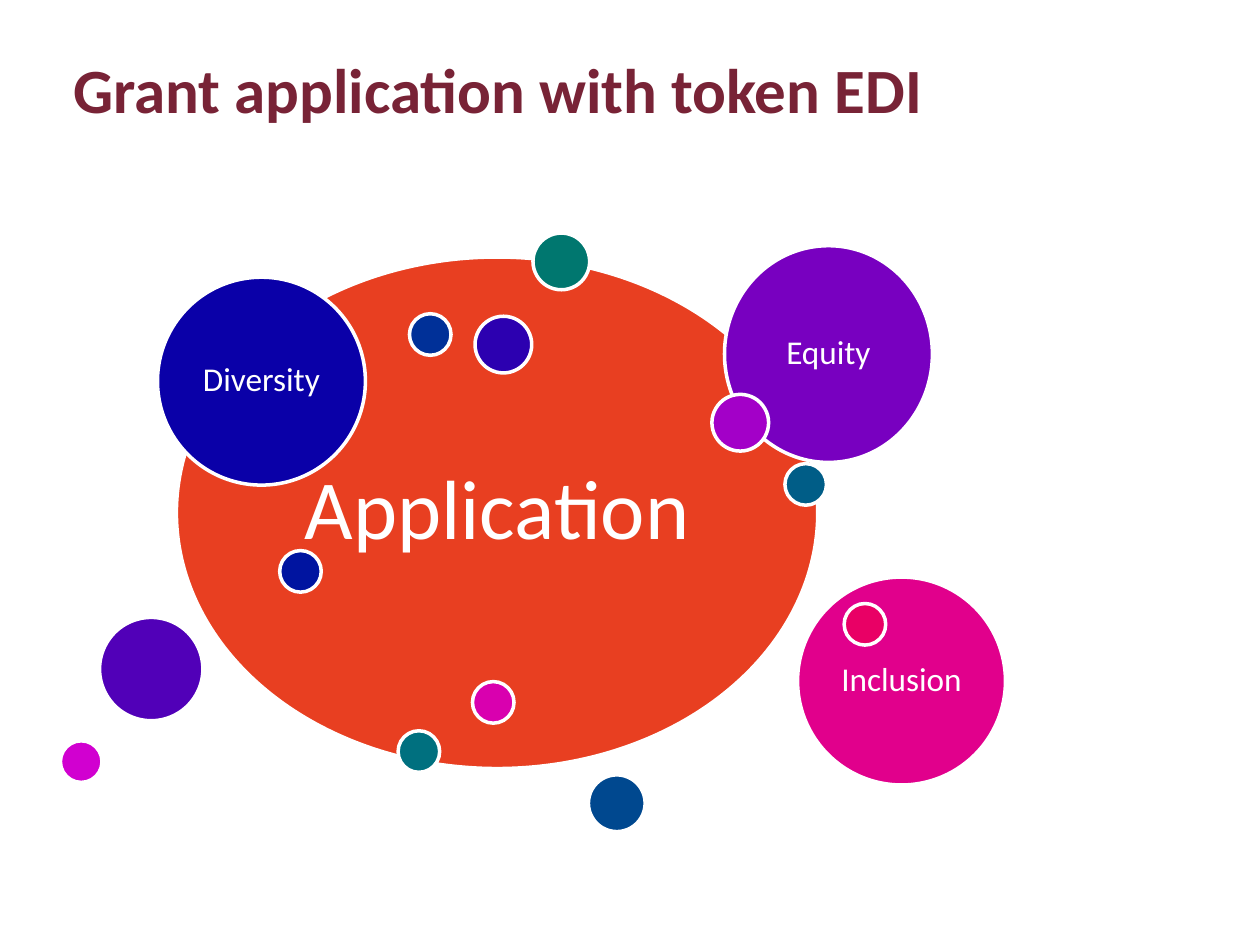
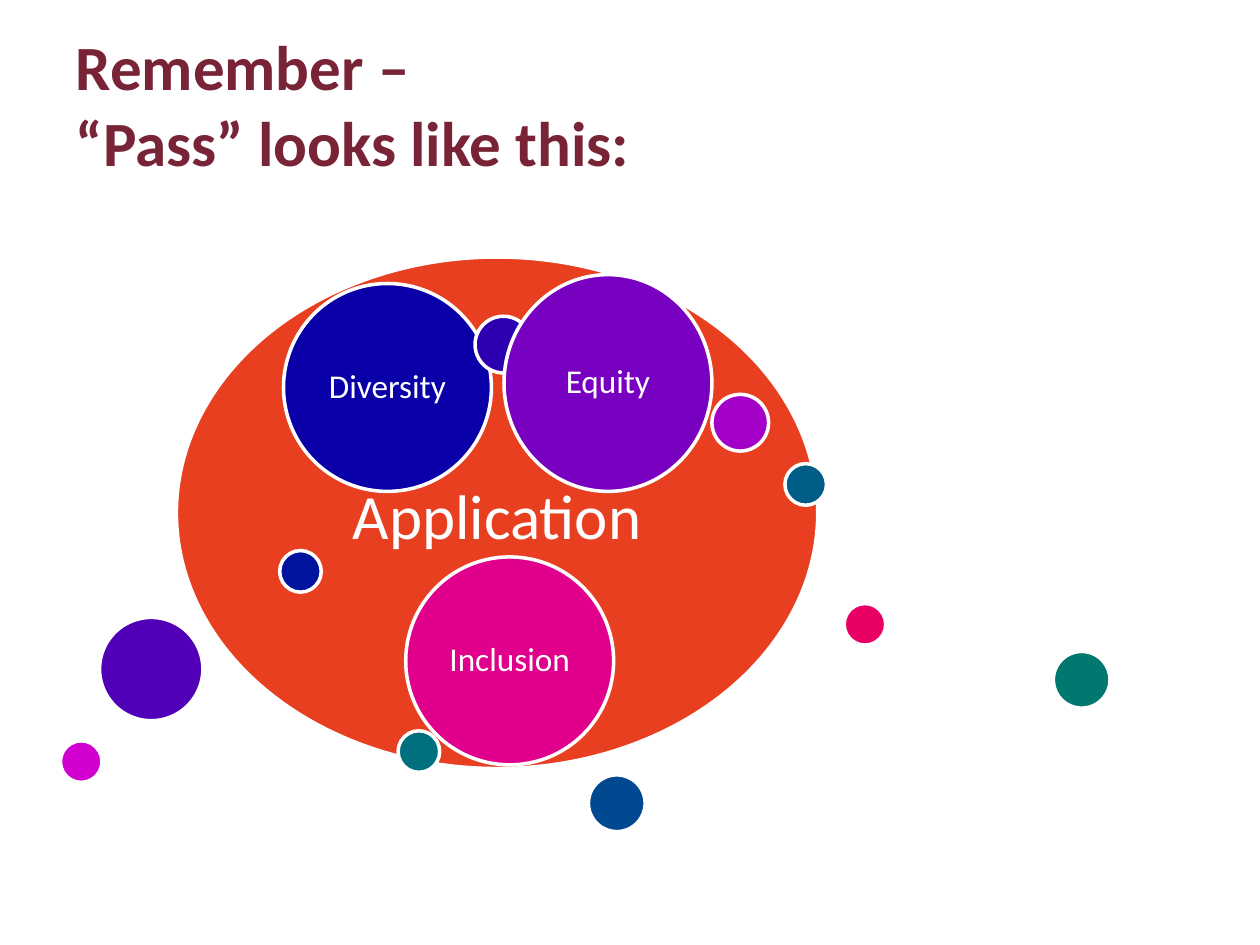
import pptx
import pptx.dml.color
import pptx.enum.shapes
import pptx.enum.text
import pptx.util

Inches = pptx.util.Inches
Pt = pptx.util.Pt
RGBColor = pptx.dml.color.RGBColor

FONT = "Calibri"
WHITE = RGBColor(0xFF, 0xFF, 0xFF)
MAROON = RGBColor(0x78, 0x23, 0x36)
ORANGE = RGBColor(0xE8, 0x3F, 0x21)
GREEN = RGBColor(0x00, 0x77, 0x6F)
TEAL = RGBColor(0x00, 0x70, 0x7F)
PETROL = RGBColor(0x00, 0x5D, 0x87)
OCEAN = RGBColor(0x00, 0x48, 0x8F)
COBALT = RGBColor(0x00, 0x30, 0x98)
ROYAL = RGBColor(0x00, 0x14, 0xA0)
NAVY = RGBColor(0x0A, 0x00, 0xA8)
INDIGO = RGBColor(0x2C, 0x00, 0xB0)
VIOLET = RGBColor(0x51, 0x00, 0xB8)
PURPLE = RGBColor(0x78, 0x00, 0xC0)
ORCHID = RGBColor(0xA3, 0x00, 0xC8)
FUCHSIA = RGBColor(0xD1, 0x00, 0xD0)
MAGENTA = RGBColor(0xD9, 0x00, 0xAF)
PINK = RGBColor(0xE1, 0x00, 0x8C)
ROSE = RGBColor(0xE9, 0x00, 0x65)

SMALL, MEDIUM, LARGE, THEME = 0.33, 0.45, 0.82, 1.65
EQUITY_HEIGHT = 1.72
DIAGRAM_LEFT, DIAGRAM_TOP = 0.48, 1.85


def style_text(frame, size, color, bold=False):
    """Give every run in the frame the shared font."""
    for paragraph in frame.paragraphs:
        for span in paragraph.runs:
            span.font.name = FONT
            span.font.size = Pt(size)
            span.font.bold = bold
            span.font.color.rgb = color


def add_title(page, text, left, top):
    """Place and format the title placeholder."""
    title = page.shapes.title
    title.left, title.top = Inches(left), Inches(top)
    title.width, title.height = Inches(8.33), Inches(1.25)
    frame = title.text_frame
    frame.text = text
    frame.word_wrap = True
    frame.auto_size = pptx.enum.text.MSO_AUTO_SIZE.NONE
    frame.vertical_anchor = pptx.enum.text.MSO_ANCHOR.TOP
    frame.paragraphs[0].alignment = pptx.enum.text.PP_ALIGN.LEFT
    style_text(frame, 36, MAROON, True)


def add_bubble(group, left, top, width, height, color, label="", size=19, drop=0):
    """Add a white-edged ellipse, its label centred or dropped below the centre."""
    bubble = group.shapes.add_shape(
        pptx.enum.shapes.MSO_SHAPE.OVAL,
        Inches(left), Inches(top), Inches(width), Inches(height))
    bubble.shadow.inherit = False
    bubble.fill.solid()
    bubble.fill.fore_color.rgb = color
    bubble.line.color.rgb = WHITE
    bubble.line.width = Pt(2)
    if label:
        frame = bubble.text_frame
        frame.text = label
        frame.word_wrap = True
        frame.vertical_anchor = pptx.enum.text.MSO_ANCHOR.MIDDLE
        frame.margin_left = frame.margin_right = Inches(0.05)
        frame.margin_top = Inches(0.05 + 2 * drop)
        frame.margin_bottom = Inches(0.05)
        frame.paragraphs[0].alignment = pptx.enum.text.PP_ALIGN.CENTER
        frame.paragraphs[0].line_spacing = 0.9
        style_text(frame, size, WHITE)


def add_diagram(page, left, top, size, green, diversity, equity, inclusion,
                drop=0, extras=()):
    """Draw the application and its bubbles, offset from the given corner."""
    group = page.shapes.add_group_shape()
    add_bubble(group, left + 0.92, top + 0.19, 5.09, 4.06, ORANGE,
               "Application", size, drop)
    bubbles = [
        (green, MEDIUM, GREEN, ""),
        ((2.68, 3.95), SMALL, TEAL, ""),
        ((5.75, 1.83), SMALL, PETROL, ""),
        ((4.19, 4.3), MEDIUM, OCEAN, ""),
        ((1.74, 2.52), SMALL, ROYAL, ""),
        *extras,
        (diversity, THEME, NAVY, "Diversity"),
        ((3.29, 0.66), MEDIUM, INDIGO, ""),
        ((0.31, 3.05), LARGE, VIOLET, ""),
        (equity, THEME, PURPLE, "Equity"),
        ((5.17, 1.28), MEDIUM, ORCHID, ""),
        ((0, 4.03), SMALL, FUCHSIA, ""),
        (inclusion, THEME, PINK, "Inclusion"),
        ((6.22, 2.94), SMALL, ROSE, ""),
    ]
    for (across, down), width, color, label in bubbles:
        height = EQUITY_HEIGHT if label == "Equity" else width
        add_bubble(group, left + across, top + down, width, height, color, label)


def add_token_page(deck):
    """Build the page whose themes sit at the edge of the application."""
    page = deck.slides.add_slide(deck.slide_layouts[5])
    add_title(page, "Grant application with token EDI", 0.48, 0.35)
    add_diagram(page, DIAGRAM_LEFT, DIAGRAM_TOP, 48, green=(3.75, 0),
                diversity=(0.77, 0.35), equity=(5.27, 0.1), inclusion=(5.85, 2.73),
                extras=[((2.77, 0.64), SMALL, COBALT, ""),
                        ((3.27, 3.56), SMALL, MAGENTA, "")])


def add_pass_page(deck):
    """Build the page whose themes sit inside the application, around its label."""
    page = deck.slides.add_slide(deck.slide_layouts[5])
    add_title(page, "Remember – \v“Pass” looks like this:", 0.5, 0.17)
    add_diagram(page, DIAGRAM_LEFT, DIAGRAM_TOP, 36, green=(7.88, 3.32),
                diversity=(1.77, 0.4), equity=(3.52, 0.33), inclusion=(2.74, 2.57),
                drop=0.05)


def main():
    """Build and save the deck."""
    deck = pptx.Presentation()
    deck.slide_width, deck.slide_height = Inches(10), Inches(7.5)
    add_token_page(deck)
    add_pass_page(deck)
    deck.save("out.pptx")


if __name__ == "__main__":
    main()
